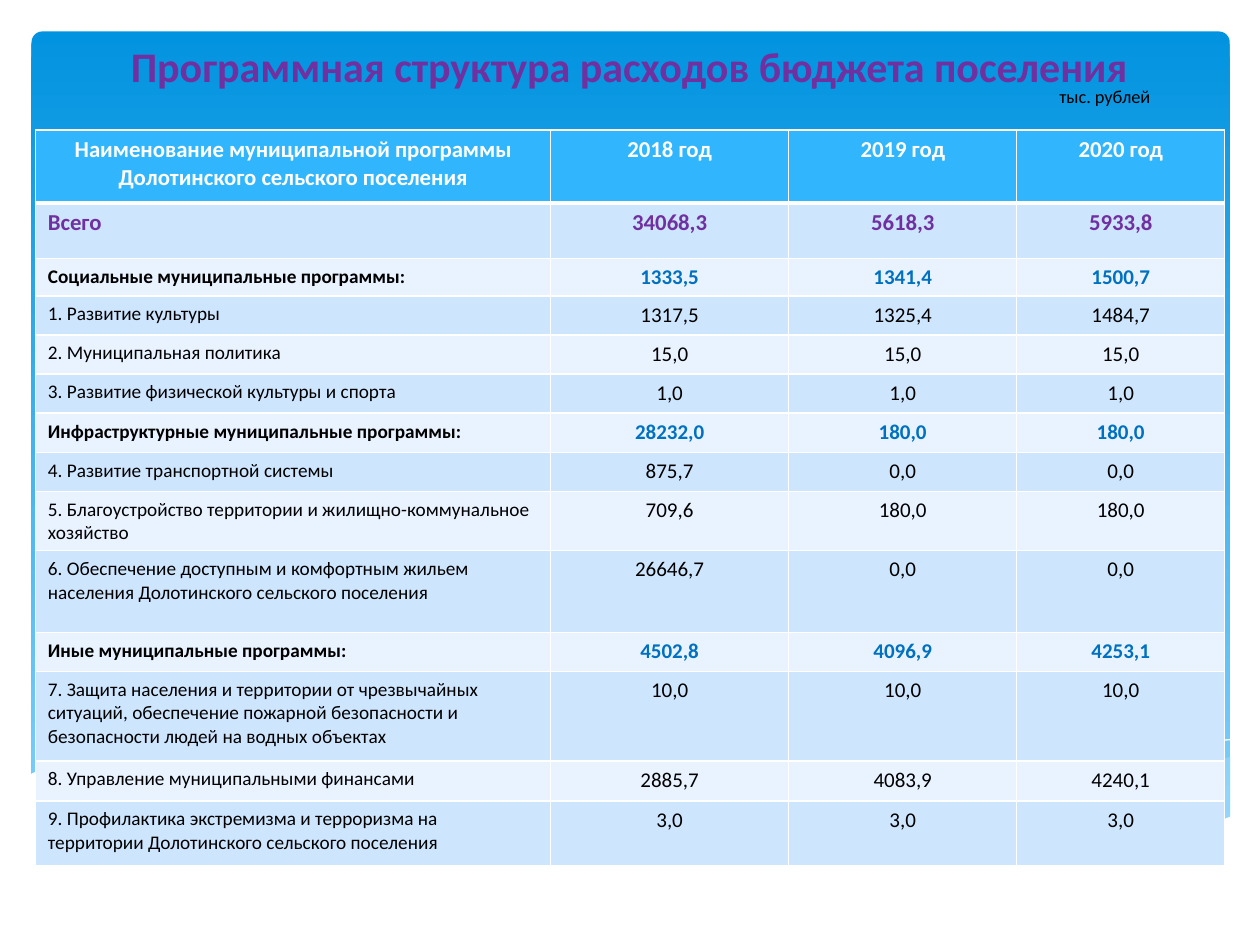
"""Builds the slide with the programme structure of a settlement's budget spending."""
from dataclasses import dataclass

from lxml.etree import SubElement
from pptx import Presentation
from pptx.dml.color import RGBColor as Rgb
from pptx.enum.shapes import MSO_SHAPE as Shape
from pptx.enum.text import PP_ALIGN as Align
from pptx.oxml.ns import qn
from pptx.util import Inches, Pt


@dataclass(frozen=True)
class Theme:
    font: str = "Calibri"
    white: str = "FFFFFF"
    black: str = "000000"
    purple: str = "7030A0"
    blue: str = "0070C0"
    header: str = "31B6FD"
    bands: tuple = ("E8F3FF", "CEE5FE")
    sky: tuple = ("0293E0", "83D3FE")
    wave: str = "C6E7FC"
    title_size: float = 24
    unit_size: float = 10.5
    header_size: float = 13
    name_size: float = 11
    value_size: float = 12
    thin: float = 1
    thick: float = 3


class SlideBuilder:
    def __init__(self, slide, theme):
        self.slide = slide
        self.theme = theme

    def set_text(self, frame, text, size, color, bold=False, align=Align.LEFT):
        frame.text = text
        para = frame.paragraphs[0]
        para.alignment = align
        font = para.runs[0].font
        font.name, font.size, font.bold = self.theme.font, Pt(size), bold
        font.color.rgb = Rgb.from_string(color)

    def text(self, left, top, width, height, text, size, color, **style):
        box = self.slide.shapes.add_textbox(Inches(left), Inches(top), Inches(width), Inches(height))
        box.text_frame.word_wrap = True
        self.set_text(box.text_frame, text, size, color, **style)

    def panel(self, left, top, width, height):
        panel = self.slide.shapes.add_shape(
            Shape.ROUNDED_RECTANGLE, Inches(left), Inches(top), Inches(width), Inches(height))
        panel.adjustments[0] = 0.013
        panel.shadow.inherit = False
        panel.line.fill.background()
        panel.fill.gradient()
        panel.fill.gradient_angle = 270
        for stop, color in zip(panel.fill.gradient_stops, self.theme.sky):
            stop.color.rgb = Rgb.from_string(color)

    def wave(self, group, points, fill=None, opacity=100):
        (start_x, start_y), *rest = [(Inches(x), Inches(y)) for x, y in points]
        builder = group.shapes.build_freeform(start_x, start_y)
        builder.add_line_segments(rest, close=fill is not None)
        wave = builder.convert_to_shape()
        wave.shadow.inherit = False
        if fill is None:
            wave.fill.background()
            wave.line.color.rgb = Rgb.from_string(self.theme.white)
            wave.line.width = Pt(0)
            return
        wave.line.fill.background()
        wave.fill.solid()
        wave.fill.fore_color.rgb = Rgb.from_string(fill)
        if opacity < 100:
            color = wave.element.spPr.find(".//" + qn("a:srgbClr"))
            SubElement(color, qn("a:alpha"), val=str(opacity * 1000))

    def borders(self, cell, **widths):
        properties = cell._tc.get_or_add_tcPr()
        for position, side in enumerate(("L", "R", "T", "B")):
            width = Pt(widths.get(side, self.theme.thin))
            border = SubElement(properties, qn("a:ln" + side), w=str(int(width)))
            fill = SubElement(border, qn("a:solidFill"))
            SubElement(fill, qn("a:srgbClr"), val=self.theme.white)
            properties.insert(position, border)

    def row_style(self, kind, column):
        theme = self.theme
        size = theme.name_size if column == 0 else theme.value_size
        return {
            "header": (theme.header_size, theme.white, True),
            "total": (theme.header_size, theme.purple, True),
            "group": (size, theme.blue if column else theme.black, True),
            "item": (size, theme.black, False),
        }[kind]

    def table(self, left, top, widths, rows):
        theme = self.theme
        heights = [height for _, height, *_ in rows]
        table = self.slide.shapes.add_table(
            len(rows), len(widths), Inches(left), Inches(top),
            Inches(sum(widths)), Inches(sum(heights))).table
        for column, width in zip(table.columns, widths):
            column.width = Inches(width)
        for index, (kind, height, *texts) in enumerate(rows):
            table.rows[index].height = Inches(height)
            for column, text in enumerate(texts):
                cell = table.cell(index, column)
                align = Align.CENTER if column or kind == "header" else Align.LEFT
                self.set_text(cell.text_frame, text, *self.row_style(kind, column), align)
                cell.fill.solid()
                cell.fill.fore_color.rgb = Rgb.from_string(
                    theme.header if kind == "header" else theme.bands[index % 2])
                self.borders(cell, **{"header": {"B": theme.thick}, "total": {"T": theme.thick}}.get(kind, {}))


RIGHT_WAVE = [
    (9.76, 6.01), (9.36, 6.09), (8.92, 6.18), (8.34, 6.32), (7.8, 6.44), (7.3, 6.55), (6.62, 6.67),
    (7.06, 6.73), (7.46, 6.77), (7.82, 6.79), (8.15, 6.8), (8.55, 6.78), (8.9, 6.74), (9.22, 6.67),
    (9.51, 6.59), (9.77, 6.49), (9.77, 6.01)]
MIDDLE_WAVE = [
    (8.94, 6.75), (8.38, 6.67), (7.76, 6.56), (7.07, 6.42), (6.3, 6.24), (5.84, 6.13), (5.42, 6.04),
    (4.89, 5.96), (4.42, 5.91), (4, 5.88), (3.62, 5.87), (3.28, 5.89), (2.87, 5.93), (3.43, 6.01),
    (4.05, 6.13), (4.91, 6.34), (5.67, 6.5), (6.35, 6.63), (6.96, 6.72), (7.49, 6.78), (7.97, 6.8),
    (8.39, 6.8), (8.94, 6.75)]
LONG_LINE = [
    (3.1, 5.97), (3.29, 5.94), (3.63, 5.9), (4.02, 5.89), (4.51, 5.89), (4.89, 5.92), (5.33, 5.96),
    (5.82, 6.02), (6.37, 6.1), (6.96, 6.21), (7.61, 6.35), (8.32, 6.52), (9.08, 6.73)]
SHORT_LINE = [
    (6.14, 6.59), (6.53, 6.48), (6.96, 6.37), (7.49, 6.25), (8.07, 6.12), (8.67, 6), (9.11, 5.94),
    (9.52, 5.89), (9.76, 5.87)]
WHITE_WAVE = [
    (9.77, 6.48), (9.5, 6.58), (9.2, 6.67), (8.87, 6.73), (8.5, 6.77), (8.09, 6.79), (7.61, 6.77),
    (7.08, 6.72), (6.48, 6.64), (5.79, 6.51), (5.03, 6.35), (4.47, 6.22), (3.91, 6.09), (3.4, 5.99),
    (2.92, 5.92), (2.5, 5.88), (2.11, 5.86), (1.61, 5.86), (1.19, 5.89), (0.85, 5.95), (0.59, 6.01),
    (0.36, 6.09), (0.23, 6.15), (0.23, 7.31), (9.77, 7.31)]

PROGRAMMES = [
    ("header", 0.58, "Наименование муниципальной программы Долотинского сельского поселения",
     "2018 год", "2019 год", "2020 год"),
    ("total", 0.44, "Всего", "34068,3", "5618,3", "5933,8"),
    ("group", 0.29, "Социальные муниципальные программы:", "1333,5", "1341,4", "1500,7"),
    ("item", 0.31, "1. Развитие культуры", "1317,5", "1325,4", "1484,7"),
    ("item", 0.31, "2. Муниципальная политика", "15,0", "15,0", "15,0"),
    ("item", 0.31, "3. Развитие физической культуры и спорта", "1,0", "1,0", "1,0"),
    ("group", 0.31, "Инфраструктурные муниципальные программы:", "28232,0", "180,0", "180,0"),
    ("item", 0.31, "4. Развитие транспортной системы", "875,7", "0,0", "0,0"),
    ("item", 0.47, "5. Благоустройство территории и жилищно-коммунальное хозяйство",
     "709,6", "180,0", "180,0"),
    ("item", 0.65, "6. Обеспечение доступным и комфортным жильем населения Долотинского сельского поселения",
     "26646,7", "0,0", "0,0"),
    ("group", 0.31, "Иные муниципальные программы:", "4502,8", "4096,9", "4253,1"),
    ("item", 0.71, "7. Защита населения и территории от чрезвычайных ситуаций, обеспечение "
     "пожарной безопасности и безопасности людей на водных объектах", "10,0", "10,0", "10,0"),
    ("item", 0.32, "8. Управление муниципальными финансами", "2885,7", "4083,9", "4240,1"),
    ("item", 0.51, "9. Профилактика экстремизма и терроризма на территории Долотинского сельского поселения",
     "3,0", "3,0", "3,0"),
]


def main():
    theme = Theme()
    deck = Presentation()
    deck.slide_width, deck.slide_height = Inches(10), Inches(7.5)
    page = SlideBuilder(deck.slides.add_slide(deck.slide_layouts[6]), theme)
    page.panel(0.25, 0.25, 9.51, 6.6)
    waves = page.slide.shapes.add_group_shape()
    page.wave(waves, RIGHT_WAVE, theme.wave, 29)
    page.wave(waves, MIDDLE_WAVE, theme.wave, 40)
    page.wave(waves, LONG_LINE)
    page.wave(waves, SHORT_LINE)
    page.wave(waves, WHITE_WAVE, theme.white)
    page.text(0.43, 0.27, 9.13, 0.5, "Программная структура расходов бюджета поселения",
              theme.title_size, theme.purple, bold=True, align=Align.CENTER)
    page.table(0.28, 1.03, (4.09, 1.89, 1.81, 1.65), PROGRAMMES)
    page.text(8.31, 0.63, 1.26, 0.28, "тыс. рублей", theme.unit_size, theme.black)
    deck.save("out.pptx")


if __name__ == "__main__":
    main()
